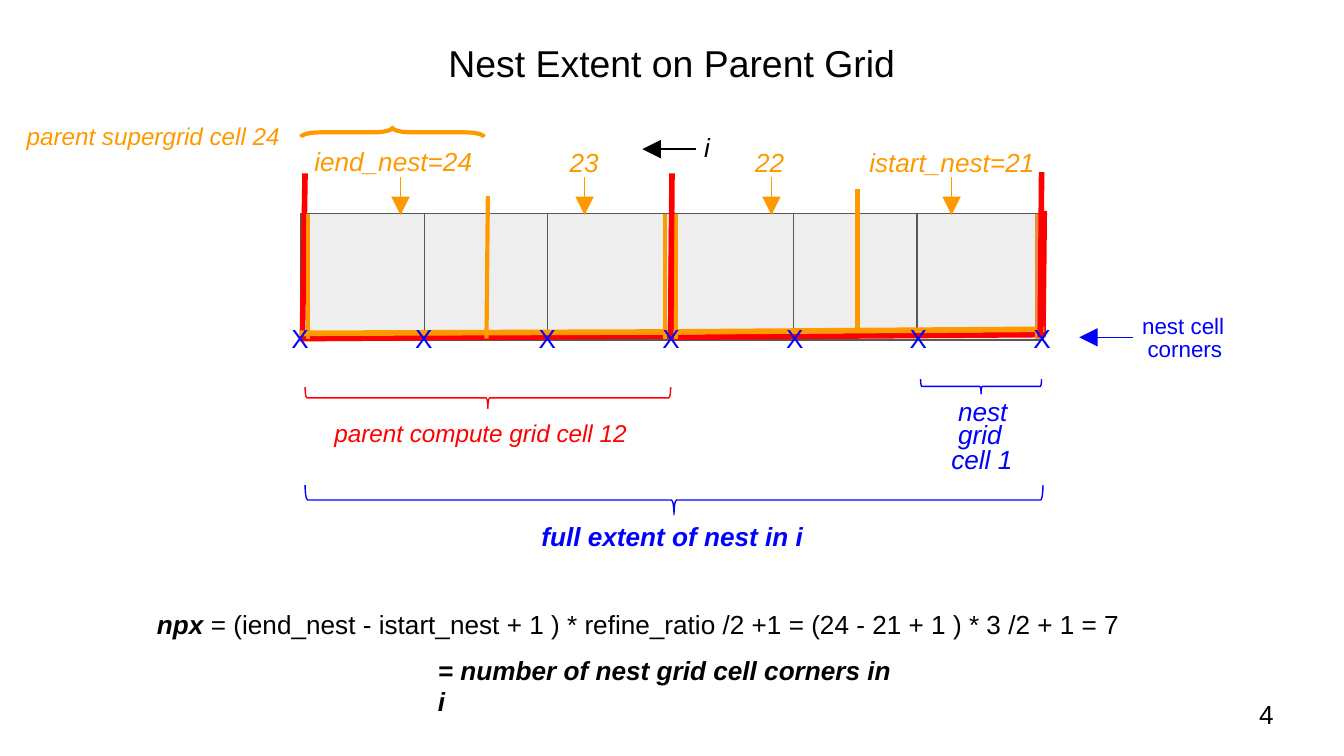
from lxml import etree
from pptx import Presentation
from pptx.dml.color import RGBColor
from pptx.enum.shapes import MSO_CONNECTOR, MSO_SHAPE
from pptx.enum.text import MSO_ANCHOR, MSO_AUTO_SIZE, PP_ALIGN
from pptx.oxml.ns import qn
from pptx.util import Inches, Pt

STRAIGHT = MSO_CONNECTOR.STRAIGHT
RECT, BRACE = MSO_SHAPE.RECTANGLE, MSO_SHAPE.LEFT_BRACE
TOP, MIDDLE = MSO_ANCHOR.TOP, MSO_ANCHOR.MIDDLE
LEFT, CENTER = PP_ALIGN.LEFT, PP_ALIGN.CENTER
NO_FIT = MSO_AUTO_SIZE.NONE

COLORS = {
    "black": "000000", "red": "FF0000", "blue": "0000FF", "orange": "FF9900",
    "dark orange": "E69138", "cell": "EEEEEE", "border": "595959",
}
FONT = "Arial"
SLIDE_WIDTH = Inches(10)
SLIDE_HEIGHT = SLIDE_WIDTH * 9 // 16
CELLS = 6
GRID_LEFT, GRID_TOP, CELL = 2.24, 1.59, 0.94
PITCH = 5.5 / CELLS
GRID_BOTTOM = 2.52
CORNER_LEFT, CORNER_PITCH = 2.07, 0.92


def rgb(name):
    return RGBColor.from_string(COLORS[name])


def place(shape, left, top, width, height):
    shape.left, shape.top = Inches(left), Inches(top)
    shape.width, shape.height = Inches(width), Inches(height)


def write(shape, *runs, size=14, color="black", bold=False, italic=False,
          align=LEFT, anchor=TOP):
    """Fill a shape with one paragraph; a run is text or (text, bold italic)."""
    tf = shape.text_frame
    tf.word_wrap, tf.auto_size, tf.vertical_anchor = True, NO_FIT, anchor
    tf.margin_left = tf.margin_right = Inches(0.1)
    tf.margin_top = tf.margin_bottom = Inches(0.1)
    p = tf.paragraphs[0]
    p.alignment = align
    for run in runs:
        text, strong = run if isinstance(run, tuple) else (run, False)
        r = p.add_run()
        r.text = text
        r.font.name, r.font.size = FONT, Pt(size)
        r.font.bold, r.font.italic = bold or strong, italic or strong
        r.font.color.rgb = rgb(color)


def add_label(s, left, top, width, *runs, height=0.38, **fmt):
    box = s.shapes.add_textbox(Inches(left), Inches(top),
                               Inches(width), Inches(height))
    write(box, *runs, **fmt)


def add_line(s, x1, y1, x2, y2, color, width=0.75, arrow=False):
    line = s.shapes.add_connector(STRAIGHT, Inches(x1), Inches(y1),
                                  Inches(x2), Inches(y2))
    line.line.color.rgb = rgb(color)
    line.line.width = Pt(width)
    if arrow:
        ln = line.line._get_or_add_ln()
        etree.SubElement(ln, qn("a:tailEnd"), type="triangle",
                         w="lg", len="lg")
    etree.SubElement(line._element.spPr, qn("a:effectLst"))


def add_brace(s, left, top, width, height, color, turn=270, weight=0.75,
              curl=0.083):
    """Draw a horizontal brace; the lengths are those seen after the turn."""
    sp = s.shapes.add_shape(BRACE, 0, 0, 0, 0)
    place(sp, left + (width - height) / 2, top + (height - width) / 2,
          height, width)
    sp.rotation = turn
    sp.adjustments[0] = curl
    sp.shadow.inherit = False
    sp.fill.background()
    sp.line.color.rgb = rgb(color)
    sp.line.width = Pt(weight)


def add_cells(s):
    for n in range(CELLS):
        sp = s.shapes.add_shape(RECT, 0, 0, 0, 0)
        place(sp, GRID_LEFT + n * PITCH, GRID_TOP, CELL, CELL)
        sp.shadow.inherit = False
        sp.fill.solid()
        sp.fill.fore_color.rgb = rgb("cell")
        sp.line.color.rgb = rgb("border")
        sp.line.width = Pt(0.75)


def add_grid_lines(s):
    bottom = GRID_BOTTOM
    for ends in [(2.27, 1.29, 2.25, bottom), (5, 1.58, 4.99, bottom),
                 (7.77, 1.57, 7.76, 2.51), (2.23, bottom, 5.02, 2.5),
                 (4.98, 2.51, 7.77, 2.49)]:
        add_line(s, *ends, "red", 3)
    add_line(s, 3.63, 1.46, 3.62, bottom, "orange", 2.25)
    for x in (4.95, 5.03, 2.29):
        add_line(s, x, GRID_TOP, x, bottom, "orange", 2.25)
    add_line(s, 7.72, GRID_TOP, 7.72, bottom, "dark orange", 2.25)
    add_line(s, 4.98, 2.47, 7.77, 2.45, "orange", 3)
    add_line(s, 2.23, 2.48, 5.02, 2.47, "orange", 3)
    add_line(s, 5, 1.29, 4.99, bottom, "red", 3)
    add_line(s, 7.75, 1.28, 7.74, 2.51, "red", 3)
    add_line(s, 6.38, 1.41, 6.38, 2.48, "orange", 2.25)


def add_indices(s):
    """Name each supergrid cell and point at it."""
    for left, top, width, arrow_x, text in [
            (2.24, 0.98, 1.5, 2.98, "iend_nest=24"),
            (4.14, 0.99, 0.5, 4.35, "23"),
            (5.52, 0.99, 0.5, 5.74, "22"),
            (6.37, 0.99, 1.56, 7.08, "istart_nest=21")]:
        add_label(s, left, top, width, text, color="orange", italic=True)
        add_line(s, arrow_x, 1.32, arrow_x, 1.6, "orange", arrow=True)
    add_label(s, 5.14, 0.88, 0.22, "i", italic=True)
    add_line(s, 5.18, 1.11, 4.78, 1.11, "black", arrow=True)


def add_extents(s):
    add_brace(s, 2.24, 0.95, 1.36, 0.07, "orange", 90, 2.25, 2.02)
    add_label(s, 0.1, 0.8, 2.17, "parent supergrid cell 24",
              height=0.47, size=13, color="orange", italic=True)
    add_brace(s, 2.27, 2.88, 2.72, 0.16, "red")
    add_label(s, 2.39, 3.01, 2.45, "parent compute grid cell 12",
              height=0.47, size=13, color="red", italic=True)
    add_brace(s, 6.85, 2.82, 0.9, 0.11, "blue")
    for left, top, width, text in [(7.03, 2.84, 0.61, "nest"),
                                   (7.03, 3.01, 0.61, "grid"),
                                   (6.98, 3.2, 0.76, "cell 1")]:
        add_label(s, left, top, width, text, color="blue", italic=True)
    add_brace(s, 2.27, 3.61, 5.49, 0.22, "blue")
    add_label(s, 3.93, 3.77, 2.17, "full extent of nest in i",
              height=0.47, color="blue", bold=True, italic=True)


def add_corners(s):
    for n in range(CELLS + 1):
        add_label(s, CORNER_LEFT + n * CORNER_PITCH, 2.3, 0.32, "X",
                  color="blue")
    add_label(s, 8.4, 2.22, 1.17, "nest cell", size=12, color="blue")
    add_label(s, 8.44, 2.39, 0.77, "corners", size=12, color="blue")
    add_line(s, 8.43, 2.51, 8.03, 2.51, "blue", arrow=True)


def add_formula(s):
    add_label(s, 1.07, 4.43, 7.87, ("npx", True),
              " = (iend_nest - istart_nest + 1 ) * refine_ratio /2 +1"
              " = (24 - 21 + 1 ) * 3 /2 + 1 = 7", height=0.52)
    add_label(s, 3.16, 4.77, 3.68, "= number of nest grid cell corners in i",
              height=0.47, bold=True, italic=True)


def main():
    prs = Presentation()
    prs.slide_width, prs.slide_height = SLIDE_WIDTH, SLIDE_HEIGHT
    s = prs.slides.add_slide(prs.slide_layouts[5])
    place(s.shapes.title, 3.16, 0.2, 3.68, 0.47)
    write(s.shapes.title, "Nest Extent on Parent Grid", size=20, align=CENTER)
    add_cells(s)
    add_indices(s)
    add_extents(s)
    add_grid_lines(s)
    add_corners(s)
    add_formula(s)
    add_label(s, 9.27, 5.1, 0.6, "4", height=0.43, anchor=MIDDLE)
    prs.save("out.pptx")


if __name__ == "__main__":
    main()
